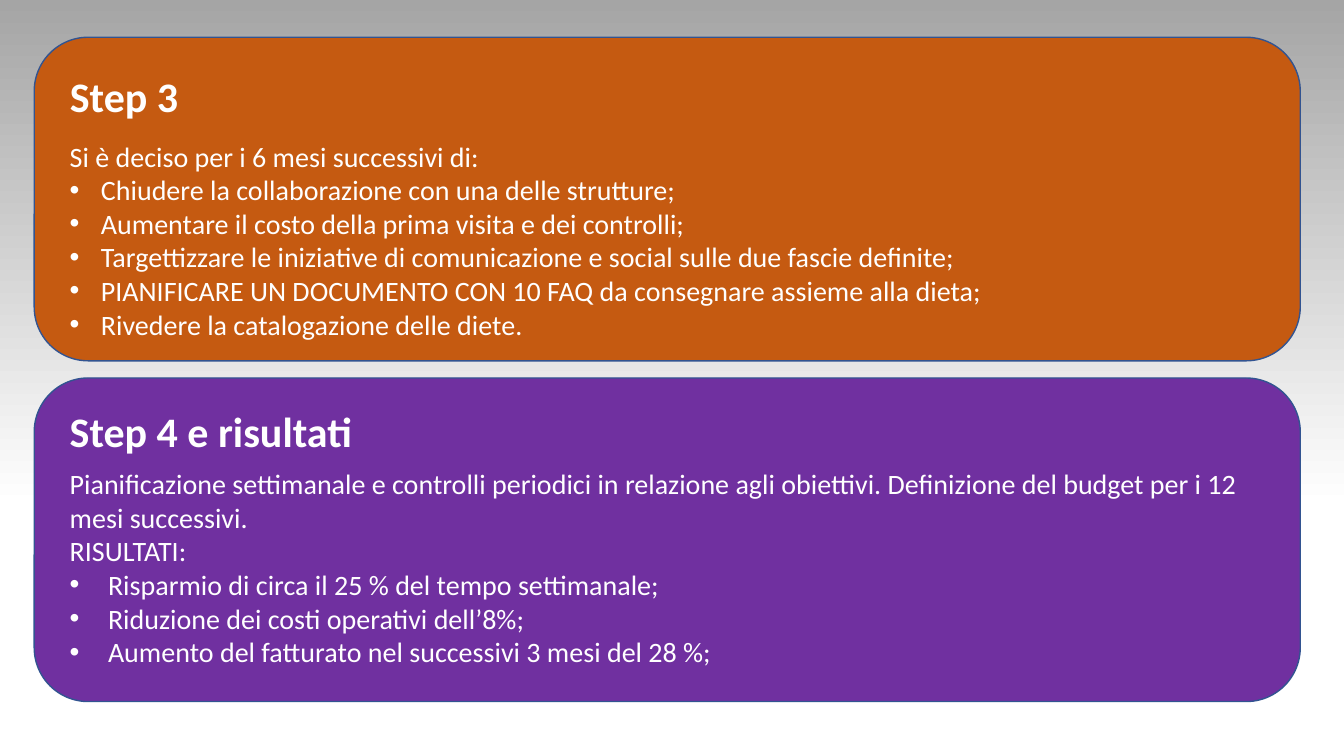
import copy
from dataclasses import dataclass

import pptx
import pptx.dml.color
import pptx.enum.shapes
import pptx.enum.text
import pptx.oxml.ns
import pptx.presentation
import pptx.shapes.autoshape
import pptx.slide
import pptx.text.text
import pptx.util
from lxml import etree

COLORS = {
    "white": "FFFFFF",
    "grey": "A5A5A5",
    "orange": "C55A11",
    "purple": "7030A0",
    "outline": "325491",
}
FONT = "Calibri"
WIDTH, HEIGHT = pptx.util.Inches(13.33), pptx.util.Inches(7.5)

# Lengths are percentages of the slide's width or height.
PANEL_LEFT, PANEL_WIDTH, PANEL_HEIGHT = 2.55, 94.2, 42.8
TEXT_LEFT = 4.45
HEADING_HEIGHT, BODY_HEIGHT = 8.13, 28.27


@dataclass
class Step:
    heading: str
    intro: list[str]
    bullets: list[str]
    fill: str
    top: float
    heading_top: float
    heading_width: float
    body_top: float
    body_width: float
    indent: float
    is_title: bool = False


STEPS = [
    Step(
        "Step 3",
        ["Si è deciso per i 6 mesi successivi di:"],
        [
            "Chiudere la collaborazione con una delle strutture;",
            "Aumentare il costo della prima visita e dei controlli;",
            "Targettizzare le iniziative di comunicazione e social sulle due fascie definite;",
            "PIANIFICARE UN DOCUMENTO CON 10 FAQ da consegnare assieme alla dieta;",
            "Rivedere la catalogazione delle diete.",
        ],
        "orange", 4.93, 8.67, 9.68, 17.73, 90.47, 0.31, is_title=True,
    ),
    Step(
        "Step 4 e risultati",
        [
            "Pianificazione settimanale e controlli periodici in relazione agli obiettivi. "
            "Definizione del budget per i 12 mesi successivi.",
            "RISULTATI:",
        ],
        [
            "Risparmio di circa il 25 % del tempo settimanale;",
            "Riduzione dei costi operativi dell’8%;",
            "Aumento del fatturato nel successivi 3 mesi del 28 %;",
        ],
        "purple", 50, 52.93, 35.48, 61.07, 89.2, 0.38,
    ),
]


def rgb(name: str) -> pptx.dml.color.RGBColor:
    return pptx.dml.color.RGBColor.from_string(COLORS[name])


def box(left: float, top: float, width: float, height: float) -> tuple[int, ...]:
    """Turn percentages of the slide into lengths."""
    return tuple(
        round(share * side / 100)
        for share, side in zip((left, top, width, height), (WIDTH, HEIGHT) * 2)
    )


def paint_background(slide: pptx.slide.Slide) -> None:
    fill = slide.background.fill
    fill.gradient()
    fill.gradient_angle = 90
    for stop, name in zip(fill.gradient_stops, ("white", "grey")):
        stop.color.rgb = rgb(name)
    stops = slide.element.xpath(".//a:gsLst")[0]
    middle = copy.deepcopy(stops[0])
    middle.set("pos", "33000")
    stops.insert(1, middle)


def add_bullet(p: pptx.text.text._Paragraph, indent: float) -> None:
    props = p._p.get_or_add_pPr()
    offset = pptx.util.Inches(indent)
    props.set("marL", str(offset))
    props.set("indent", str(-offset))
    qn = pptx.oxml.ns.qn
    etree.SubElement(props, qn("a:buFont")).set("typeface", "Arial")
    etree.SubElement(props, qn("a:buChar")).set("char", "•")


def format_paragraph(p: pptx.text.text._Paragraph, size: float, bold: bool = False) -> None:
    p.alignment = pptx.enum.text.PP_ALIGN.LEFT
    p.font.name = FONT
    p.font.size = pptx.util.Pt(size)
    p.font.bold = bold
    p.font.color.rgb = rgb("white")


def format_frame(tf: pptx.text.text.TextFrame, wrap: bool = True) -> None:
    tf.word_wrap = wrap
    tf.auto_size = pptx.enum.text.MSO_AUTO_SIZE.SHAPE_TO_FIT_TEXT
    tf.vertical_anchor = pptx.enum.text.MSO_ANCHOR.TOP


def add_panel(slide: pptx.slide.Slide, step: Step) -> None:
    sp = slide.shapes.add_shape(
        pptx.enum.shapes.MSO_SHAPE.ROUNDED_RECTANGLE,
        *box(PANEL_LEFT, step.top, PANEL_WIDTH, PANEL_HEIGHT),
    )
    sp.shadow.inherit = False
    sp.fill.solid()
    sp.fill.fore_color.rgb = rgb(step.fill)
    sp.line.color.rgb = rgb("outline")
    sp.line.width = pptx.util.Pt(1)


def add_heading(slide: pptx.slide.Slide, step: Step) -> None:
    place = box(TEXT_LEFT, step.heading_top, step.heading_width, HEADING_HEIGHT)
    if step.is_title:
        sp = slide.shapes.title
        sp.left, sp.top, sp.width, sp.height = place
        slide.shapes.element.append(sp.element)  # in front of its panel
    else:
        sp = slide.shapes.add_textbox(*place)
    tf = sp.text_frame
    tf.text = step.heading
    format_frame(tf, wrap=not step.is_title)
    format_paragraph(tf.paragraphs[0], 30, bold=True)


def add_body(slide: pptx.slide.Slide, step: Step) -> None:
    sp = slide.shapes.add_textbox(
        *box(TEXT_LEFT, step.body_top, step.body_width, BODY_HEIGHT)
    )
    tf = sp.text_frame
    tf.text = "\n".join(step.intro + step.bullets)
    format_frame(tf)
    for i, p in enumerate(tf.paragraphs):
        if i >= len(step.intro):
            add_bullet(p, step.indent)
        format_paragraph(p, 20)


def main() -> None:
    prs = pptx.Presentation()
    prs.slide_width, prs.slide_height = WIDTH, HEIGHT
    slide = prs.slides.add_slide(prs.slide_layouts.get_by_name("Title Only"))
    paint_background(slide)
    for step in STEPS:
        add_panel(slide, step)
        add_heading(slide, step)
        add_body(slide, step)
    prs.save("out.pptx")


if __name__ == "__main__":
    main()
